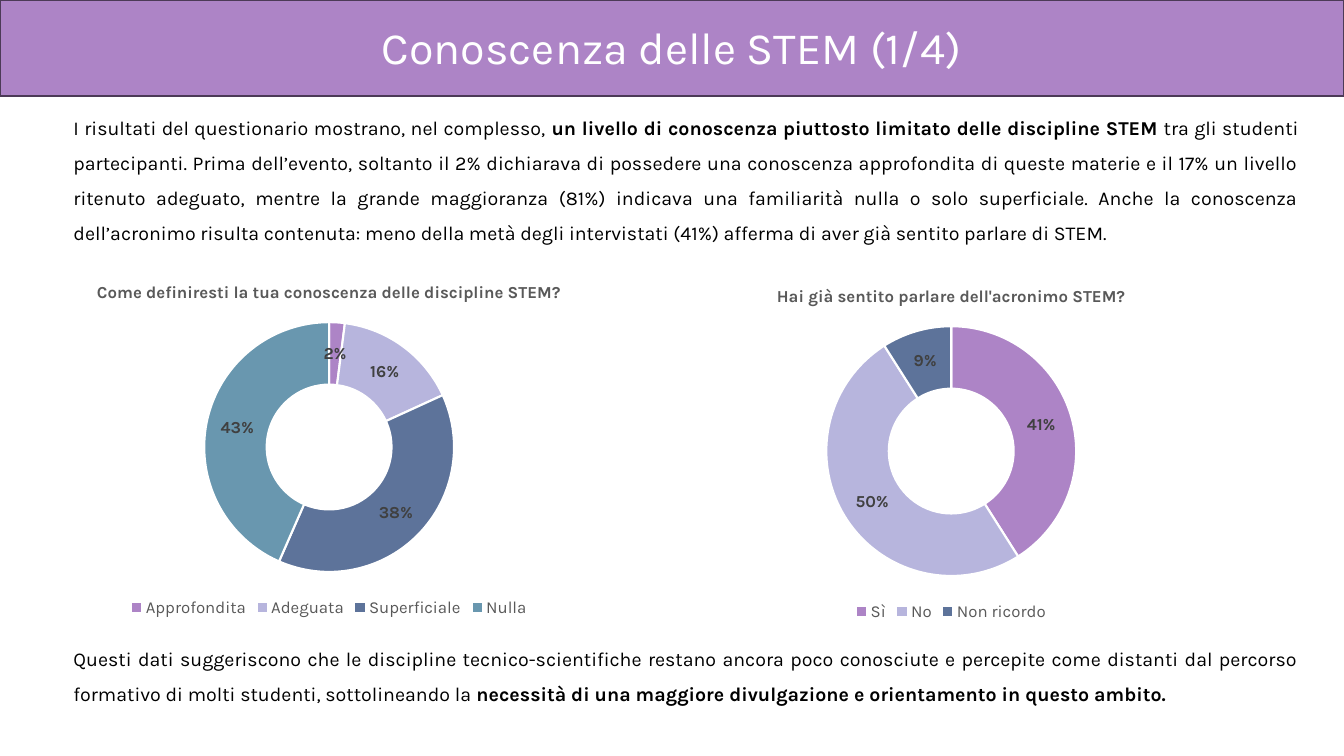
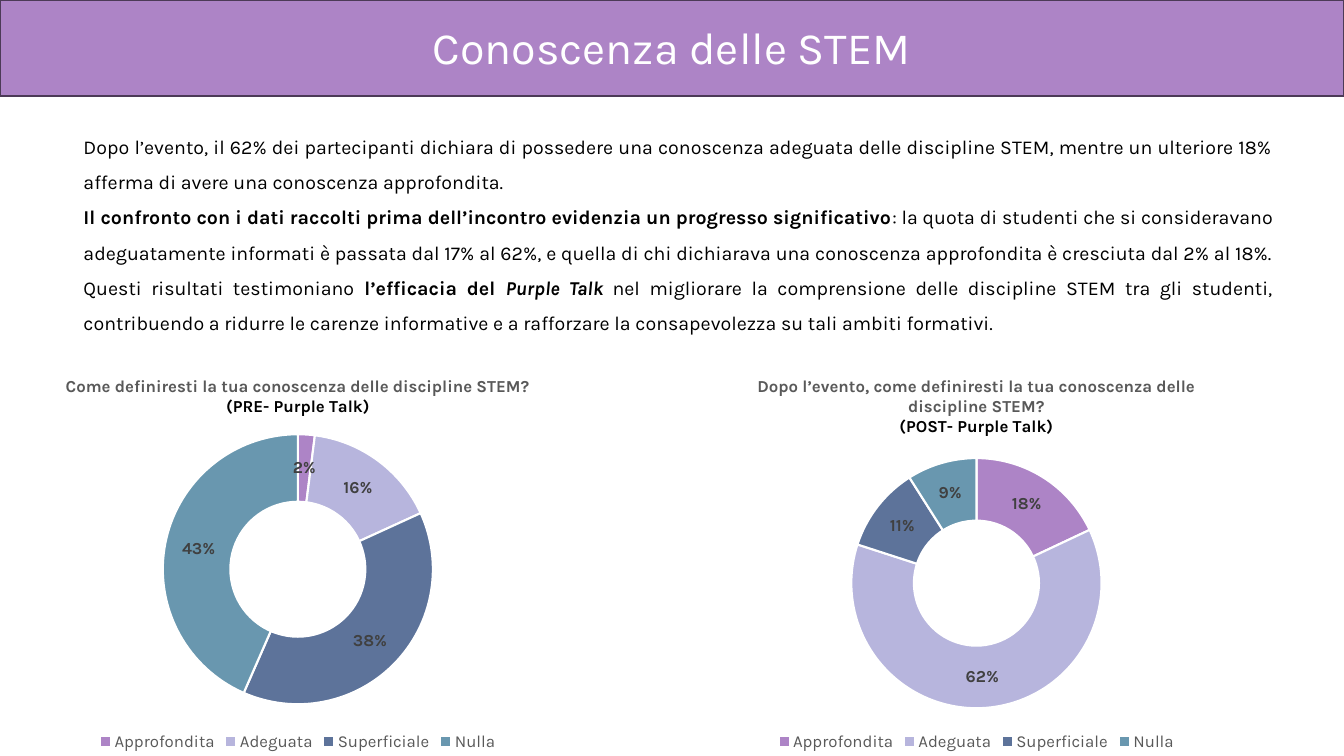
from dataclasses import dataclass

from pptx import Presentation
from pptx.chart.data import CategoryChartData
from pptx.dml.color import RGBColor
from pptx.enum.chart import XL_CHART_TYPE, XL_LEGEND_POSITION
from pptx.enum.shapes import MSO_SHAPE
from pptx.enum.text import MSO_ANCHOR, MSO_AUTO_SIZE, PP_ALIGN
from pptx.util import Inches, Pt

DOUGHNUT = XL_CHART_TYPE.DOUGHNUT
BOTTOM = XL_LEGEND_POSITION.BOTTOM
RECTANGLE = MSO_SHAPE.RECTANGLE
TOP = MSO_ANCHOR.TOP
NO_FIT, GROW = MSO_AUTO_SIZE.NONE, MSO_AUTO_SIZE.SHAPE_TO_FIT_TEXT
CENTER, JUSTIFY = PP_ALIGN.CENTER, PP_ALIGN.JUSTIFY


@dataclass(frozen=True)
class Theme:
    font: str = "Karla"
    title_size: int = 32
    body_size: int = 14
    chart_size: int = 12
    band: str = "AD84C6"
    band_line: str = "4C3A57"
    white: str = "FFFFFF"
    text: str = "000000"
    muted: str = "595959"
    label: str = "404040"
    slices: tuple = ("AD84C6", "B7B5DD", "5D739A", "6997AF")


THEME = Theme()
WIDTH, HEIGHT = 13.33, 7.5
BAND_HEIGHT = 0.95
TITLE_BOX = (1.68, 0.15, 9.97, 0.64)

# Content: runs are (text, style), where style holds "b" and/or "i"
LEVELS = ("Approfondita", "Adeguata", "Superficiale", "Nulla")
BEFORE = (2, 16, 38, 43)
LEVEL_QUESTION = "Come definiresti la tua conoscenza delle discipline STEM?"

SLIDES = [
    {
        "title": "Conoscenza delle STEM (1/4)",
        "texts": [
            {"box": (0.63, 0.98, 12.35, 1.48), "paragraphs": [[
                ("I risultati del questionario mostrano, nel complesso, ", ""),
                ("un livello di conoscenza piuttosto limitato delle discipline STEM", "b"),
                (" tra gli studenti partecipanti. Prima dell’evento, soltanto il 2% "
                 "dichiarava di possedere una conoscenza approfondita di queste materie "
                 "e il 17% un livello ritenuto adeguato, mentre la grande maggioranza "
                 "(81%) indicava una familiarità nulla o solo superficiale. Anche la "
                 "conoscenza dell’acronimo risulta contenuta: meno della metà degli "
                 "intervistati (41%) afferma di aver già sentito parlare di STEM.", ""),
            ]]},
            {"box": (0.63, 6.25, 12.35, 0.77), "paragraphs": [[
                ("Questi dati suggeriscono che le discipline tecnico-scientifiche restano "
                 "ancora poco conosciute e percepite come distanti dal percorso formativo "
                 "di molti studenti, sottolineando la ", ""),
                ("necessità di una maggiore divulgazione e orientamento in questo ambito.",
                 "b"),
            ]]},
        ],
        "charts": [
            {"box": (-0.28, 2.63, 7.09, 3.54), "ring": (0.16, 0.7),
             "question": LEVEL_QUESTION, "cats": LEVELS, "values": BEFORE},
            {"box": (5.89, 2.67, 7.09, 3.54), "ring": (0.16, 0.7),
             "question": "Hai già sentito parlare dell'acronimo STEM?",
             "cats": ("Sì", "No", "Non ricordo"), "values": (41, 50, 9)},
        ],
    },
    {
        "title": "Conoscenza delle STEM",
        "texts": [
            {"box": (0.73, 1.17, 12, 2.19), "paragraphs": [
                [("Dopo l’evento, il 62% dei partecipanti dichiara di possedere una "
                  "conoscenza adeguata delle discipline STEM, mentre un ulteriore 18% "
                  "afferma di avere una conoscenza approfondita.", "")],
                [("Il confronto con i dati raccolti prima dell’incontro evidenzia un "
                  "progresso significativo", "b"),
                 (": la quota di studenti che si consideravano adeguatamente informati è "
                  "passata dal 17% al 62%, e quella di chi dichiarava una conoscenza "
                  "approfondita è cresciuta dal 2% al 18%. Questi risultati "
                  "testimoniano ", ""),
                 ("l’efficacia del ", "b"),
                 ("Purple Talk ", "bi"),
                 ("nel migliorare la comprensione delle discipline STEM tra gli studenti, "
                  "contribuendo a ridurre le carenze informative e a rafforzare la "
                  "consapevolezza su tali ambiti formativi.", "")],
            ]},
        ],
        "charts": [
            {"box": (0, 3.56, 5.91, 3.94), "ring": (0.19, 0.68),
             "question": LEVEL_QUESTION, "moment": "(PRE- Purple Talk)",
             "cats": LEVELS, "values": BEFORE},
            {"box": (6.73, 3.56, 5.91, 3.94), "ring": (0.25, 0.63),
             "question": "Dopo l’evento, come definiresti la tua conoscenza delle "
                         "discipline STEM?",
             "moment": "(POST- Purple Talk)", "cats": LEVELS, "values": (18, 62, 11, 9)},
        ],
    },
]


def rgb(value):
    return RGBColor.from_string(value)


def inches(box):
    return [Inches(v) for v in box]


def set_font(font, size, color, style=""):
    font.name, font.size = THEME.font, Pt(size)
    font.bold, font.italic = "b" in style, "i" in style
    font.color.rgb = rgb(color)


def add_run(p, text, size, color, style=""):
    r = p.add_run()
    r.text = text
    set_font(r.font, size, color, style)


def add_header(s, text):
    """Colour band behind the title placeholder."""
    band = s.shapes.add_shape(RECTANGLE, *inches((0, 0, WIDTH, BAND_HEIGHT)))
    band.shadow.inherit = False
    band.fill.solid()
    band.fill.fore_color.rgb = rgb(THEME.band)
    band.line.color.rgb = rgb(THEME.band_line)
    band.line.width = Pt(1.5)
    title = s.shapes.title
    title.left, title.top, title.width, title.height = inches(TITLE_BOX)
    band._element.addnext(title._element)
    tf = title.text_frame
    tf.auto_size, tf.vertical_anchor = NO_FIT, TOP
    p = tf.paragraphs[0]
    p.alignment = CENTER
    add_run(p, text, THEME.title_size, THEME.white)


def add_text(s, box, paragraphs):
    tf = s.shapes.add_textbox(*inches(box)).text_frame
    tf.word_wrap, tf.auto_size = True, GROW
    for i, runs in enumerate(paragraphs):
        p = tf.add_paragraph() if i else tf.paragraphs[0]
        p.alignment, p.line_spacing = JUSTIFY, 1.5
        for text, style in runs:
            add_run(p, text, THEME.body_size, THEME.text, style)


def place_ring(chart, box, ring):
    """Fix the ring: top and diameter as shares of the chart height."""
    top, diameter = ring
    width = diameter * box[3] / box[2]
    area = chart._chartSpace.chart.plotArea
    for old in area.xpath("c:layout"):
        area.remove(old)
    layout = area.makeelement(area.tag.replace("plotArea", "layout"))
    area.insert(0, layout)

    def add(parent, name, value=None):
        child = parent.makeelement(area.tag.replace("plotArea", name))
        if value is not None:
            child.set("val", str(value))
        parent.append(child)
        return child

    manual = add(layout, "manualLayout")
    for name, value in (("layoutTarget", "inner"), ("xMode", "edge"), ("yMode", "edge"),
                        ("x", round((1 - width) / 2, 4)), ("y", top),
                        ("w", round(width, 4)), ("h", diameter)):
        add(manual, name, value)


def add_doughnut(s, box, ring, question, cats, values, moment=None):
    data = CategoryChartData()
    data.categories = cats
    data.add_series("Series 1", values)
    chart = s.shapes.add_chart(DOUGHNUT, *inches(box), data).chart
    set_font(chart.font, THEME.chart_size, THEME.text)

    # Title
    chart.has_title = True
    tf = chart.chart_title.text_frame
    add_run(tf.paragraphs[0], question, THEME.chart_size, THEME.muted, "b")
    if moment:
        add_run(tf.add_paragraph(), moment, THEME.chart_size, THEME.text, "b")
    chart.chart_title.include_in_layout = False

    # Legend
    chart.has_legend = True
    chart.legend.position, chart.legend.include_in_layout = BOTTOM, False
    set_font(chart.legend.font, THEME.chart_size, THEME.muted)

    # Slices and percentages
    plot = chart.plots[0]
    plot.vary_by_categories = True
    plot._element.xpath("c:holeSize")[0].set("val", "75")
    series = plot.series[0]
    for i, color in enumerate(THEME.slices[:len(values)]):
        fmt = series.points[i].format
        fmt.fill.solid()
        fmt.fill.fore_color.rgb = rgb(color)
        fmt.line.color.rgb = rgb(THEME.white)
        fmt.line.width = Pt(1.5)
    labels = series.data_labels
    labels.show_percentage, labels.show_value = True, False
    labels.number_format, labels.number_format_is_linked = "0%", False
    set_font(labels.font, THEME.chart_size, THEME.label, "b")
    place_ring(chart, box, ring)


def main():
    prs = Presentation()
    prs.slide_width, prs.slide_height = Inches(WIDTH), Inches(HEIGHT)
    title_only = prs.slide_layouts[5]
    for content in SLIDES:
        s = prs.slides.add_slide(title_only)
        add_header(s, content["title"])
        for text in content["texts"]:
            add_text(s, **text)
        for chart in content["charts"]:
            add_doughnut(s, **chart)
    prs.save("out.pptx")


if __name__ == "__main__":
    main()
